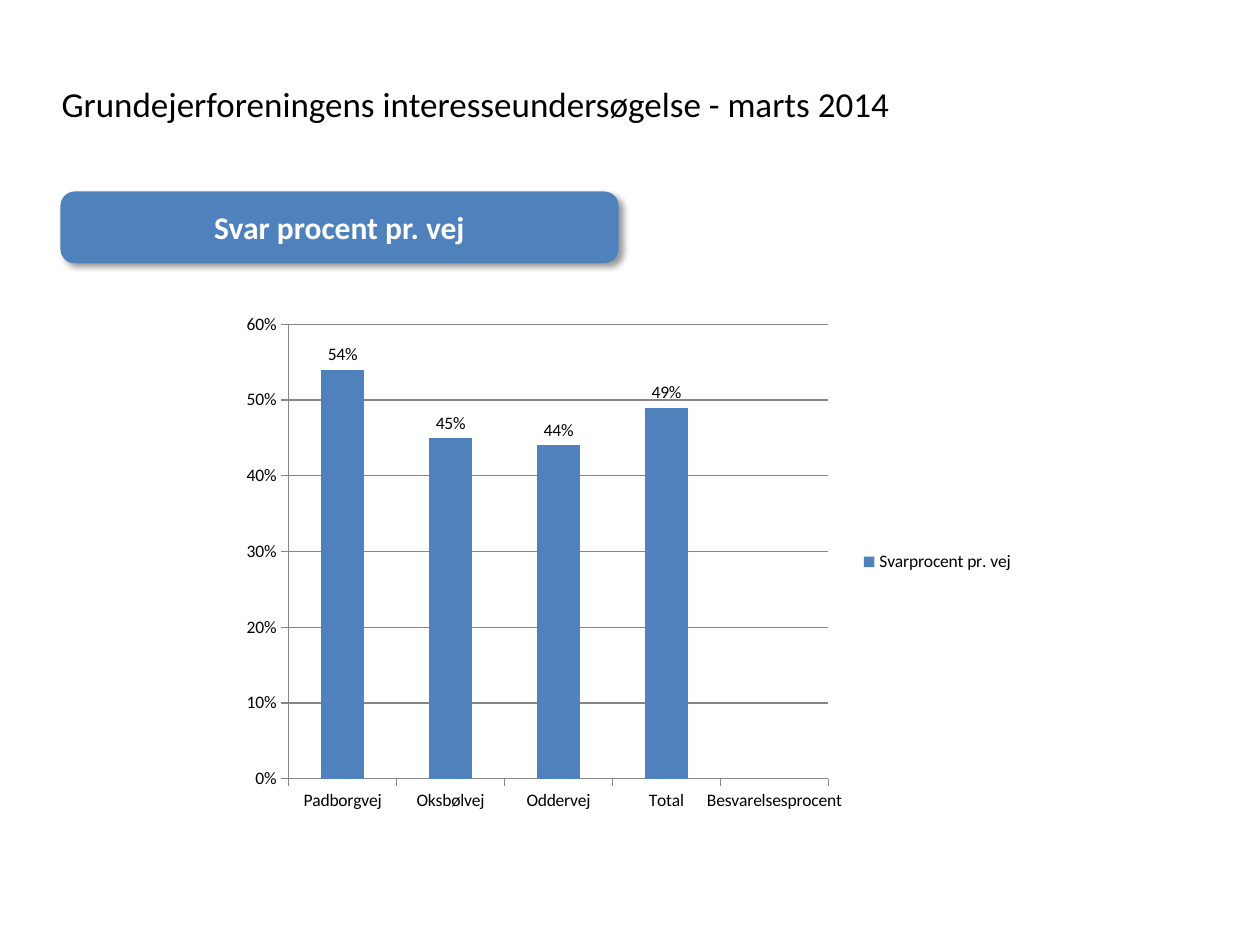
from dataclasses import dataclass

from lxml import etree
from pptx import Presentation
from pptx import util as u
from pptx.chart.data import CategoryChartData
from pptx.dml.color import RGBColor
from pptx.enum import chart as ch, shapes, text
from pptx.oxml import parse_xml
from pptx.oxml.ns import nsdecls, qn

FONT = "Calibri"
BLUE, BLACK, WHITE, GREY = "4F81BD", "000000", "FFFFFF", "868686"
RATES = {
    "Padborgvej": 0.54,
    "Oksbølvej": 0.45,
    "Oddervej": 0.44,
    "Total": 0.49,
    "Besvarelsesprocent": None,
}


@dataclass
class Label:
    words: str
    box: tuple[float, float, float, float]
    size: int
    color: str
    inset: tuple[float, float]
    align: text.PP_ALIGN = text.PP_ALIGN.LEFT
    bold: bool = False
    fill: str | None = None


LABELS = [
    Label("Grundejerforeningens interesseundersøgelse - marts 2014",
          (0.39, 0.37, 8.54, 0.9), 20, BLACK, (0.1, 0.05)),
    Label("Svar procent pr. vej", (0.48, 1.52, 4.43, 0.57), 18, WHITE,
          (0.04, 0.04), text.PP_ALIGN.CENTER, True, BLUE),
]


def paint(color, value: str) -> None:
    color.rgb = RGBColor.from_string(value)


def style(font, size: int, color: str, bold: bool = False) -> None:
    font.name, font.size, font.bold = FONT, u.Pt(size), bold
    paint(font.color, color)


def shade(shape) -> None:
    shape._element.spPr.append(parse_xml(
        f'<a:effectLst {nsdecls("a")}>'
        f'<a:outerShdw blurRad="{u.Pt(4)}" dist="{u.Pt(3)}" dir="2700000" '
        'algn="tl" rotWithShape="0">'
        f'<a:srgbClr val="{BLACK}"><a:alpha val="40000"/></a:srgbClr>'
        '</a:outerShdw></a:effectLst>'))


def draw_label(slide, label: Label) -> None:
    box = [u.Inches(n) for n in label.box]
    if label.fill:
        shape = slide.shapes.add_shape(
            shapes.MSO_SHAPE.ROUNDED_RECTANGLE, *box)
        shape.adjustments[0] = 0.2
        shape.fill.solid()
        paint(shape.fill.fore_color, label.fill)
        shape.line.fill.background()
        shade(shape)
    else:
        shape = slide.shapes.add_textbox(*box)
    frame = shape.text_frame
    frame.word_wrap = True
    frame.vertical_anchor = text.MSO_ANCHOR.MIDDLE
    frame.margin_left = frame.margin_right = u.Inches(label.inset[0])
    frame.margin_top = frame.margin_bottom = u.Inches(label.inset[1])
    para = frame.paragraphs[0]
    para.text, para.alignment = label.words, label.align
    style(para.font, label.size, label.color, label.bold)


def set_plot(chart, **place: float) -> None:
    area = chart._chartSpace.chart.plotArea
    for old in area.findall(qn("c:layout")):
        area.remove(old)
    layout = etree.Element(qn("c:layout"))
    manual = etree.SubElement(layout, qn("c:manualLayout"))
    rules = {"layoutTarget": "inner", "xMode": "edge", "yMode": "edge"}
    for key, value in {**rules, **place}.items():
        etree.SubElement(manual, qn(f"c:{key}")).set("val", str(value))
    area.insert(0, layout)


def draw_chart(slide) -> None:
    data = CategoryChartData(number_format="0%")
    data.categories = list(RATES)
    data.add_series("Svarprocent pr. vej", list(RATES.values()))
    box = [u.Inches(n) for n in (1.85, 2.41, 6.3, 4.1)]
    chart = slide.shapes.add_chart(
        ch.XL_CHART_TYPE.COLUMN_CLUSTERED, *box, data).chart
    style(chart.font, 10, BLACK)
    chart.has_title = False
    chart.has_legend = True
    chart.legend.position = ch.XL_LEGEND_POSITION.RIGHT
    chart.legend.include_in_layout = False
    set_plot(chart, x=0.07, y=0.04, w=0.68, h=0.88)

    plot = chart.plots[0]
    plot.gap_width, plot.vary_by_categories = 150, False
    bars = plot.series[0]
    bars.format.fill.solid()
    paint(bars.format.fill.fore_color, BLUE)
    tags = bars.data_labels
    tags.show_value = True
    tags.number_format, tags.number_format_is_linked = "0%", False
    tags.position = ch.XL_LABEL_POSITION.OUTSIDE_END

    rates = chart.value_axis
    rates.minimum_scale, rates.maximum_scale, rates.major_unit = 0, 0.6, 0.1
    rates.tick_labels.number_format = "0%"
    rates.tick_labels.number_format_is_linked = False
    rates.has_major_gridlines = True
    paint(rates.major_gridlines.format.line.color, GREY)
    for axis in (rates, chart.category_axis):
        axis.major_tick_mark = ch.XL_TICK_MARK.OUTSIDE
        paint(axis.format.line.color, GREY)


def main() -> None:
    deck = Presentation()
    deck.slide_width, deck.slide_height = u.Inches(10), u.Inches(7.5)
    slide = deck.slides.add_slide(deck.slide_layouts[6])
    for label in LABELS:
        draw_label(slide, label)
    draw_chart(slide)
    deck.save("out.pptx")


if __name__ == "__main__":
    main()
